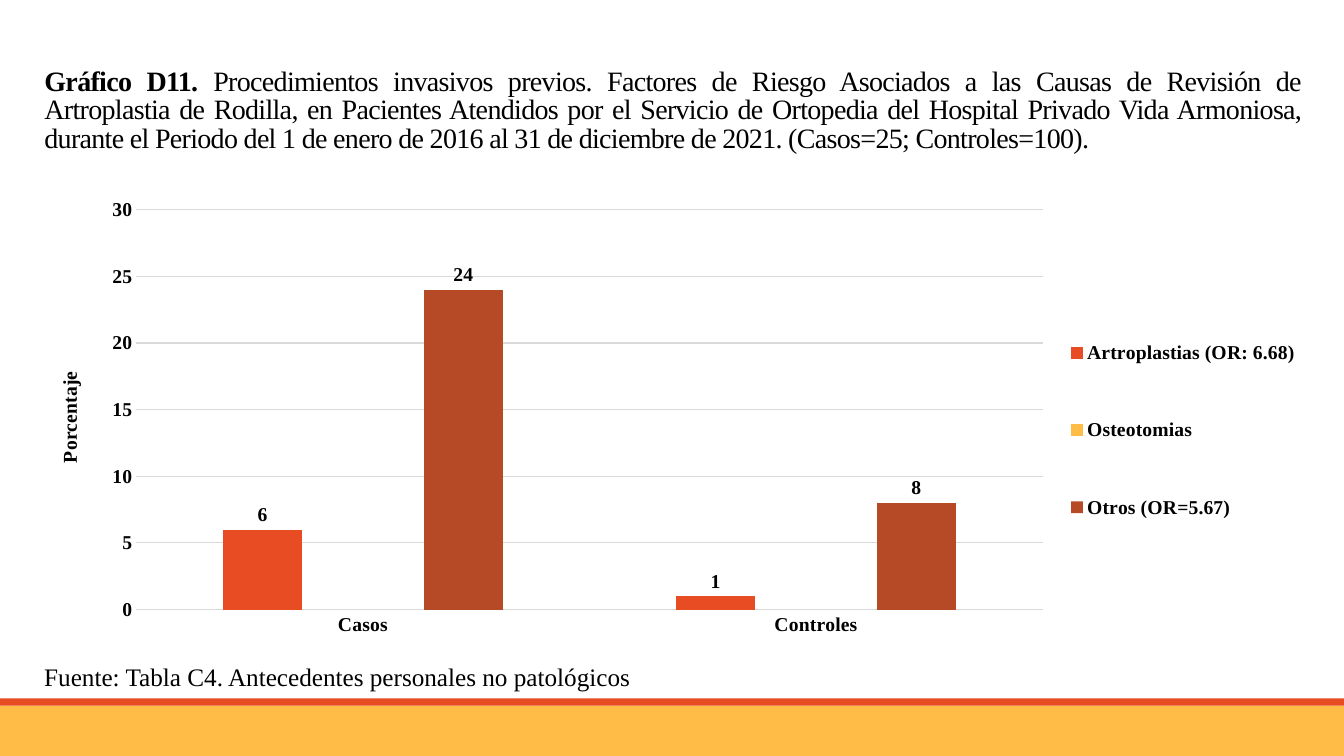
"""Build the slide on previous invasive procedures, with its column chart."""
from dataclasses import dataclass

from lxml import etree
from pptx import Presentation
from pptx.chart.data import CategoryChartData
from pptx.dml.color import RGBColor
from pptx.enum import chart as ch, shapes, text
from pptx.oxml import ns
from pptx.util import Inches, Pt


@dataclass(frozen=True)
class Theme:
    """Colours, font and type sizes."""
    red: str = "E84C22"
    gold: str = "FFBD47"
    rust: str = "B64926"
    ink: str = "000000"
    grid: str = "D9D9D9"
    face: str = "Times New Roman"
    head: int = 20
    note: int = 18
    label: int = 14


THEME = Theme()
LEFT, WIDTH = 0.34, 12.66
LEAD = "Gráfico D11. "
TITLE = (
    "Procedimientos invasivos previos. Factores de Riesgo Asociados a las "
    "Causas de Revisión de Artroplastia de Rodilla, en Pacientes Atendidos "
    "por el Servicio de Ortopedia del Hospital Privado Vida Armoniosa, durante "
    "el Periodo del 1 de enero de 2016 al 31 de diciembre de 2021. "
    "(Casos=25; Controles=100)."
)
SOURCE = "Fuente: Tabla C4. Antecedentes personales no patológicos"
GROUPS = ["Casos", "Controles"]
SERIES = [
    ("Artroplastias (OR: 6.68)", (6, 1), THEME.red),
    ("Osteotomias", (None, None), THEME.gold),
    ("Otros (OR=5.67)", (24, 8), THEME.rust),
]


def box(*sides):
    """Turn left, top, width and height into lengths."""
    return [Inches(side) for side in sides]


def paint(fill, color):
    """Give a fill one solid colour."""
    fill.solid()
    fill.fore_color.rgb = RGBColor.from_string(color)


def style(font, size, bold=False):
    """Set the shared face and ink on a font."""
    font.name, font.size, font.bold = THEME.face, Pt(size), bold
    font.color.rgb = RGBColor.from_string(THEME.ink)


def add_band(slide, top, height, color):
    """Add a full-width band."""
    band = slide.shapes.add_shape(
        shapes.MSO_SHAPE.RECTANGLE, *box(0, top, 13.33, height))
    band.shadow.inherit = False
    paint(band.fill, color)
    band.line.fill.background()


def add_title(slide):
    """Place and fill the title, with a bold lead."""
    title = slide.shapes.title
    title.left, title.top, title.width, title.height = box(
        LEFT, 0.31, WIDTH, 1.59)
    frame = title.text_frame
    frame.word_wrap = True
    frame.auto_size = text.MSO_AUTO_SIZE.NONE
    frame.vertical_anchor = text.MSO_ANCHOR.MIDDLE
    para = frame.paragraphs[0]
    para.alignment = text.PP_ALIGN.JUSTIFY
    para.line_spacing = 0.85
    style(para.font, THEME.head)
    for words, bold in ((LEAD, True), (TITLE, False)):
        run = para.add_run()
        run.text = words
        style(run.font, THEME.head, bold)
        run.font._element.set("spc", "-50")


def add_note(slide):
    """Add the source line under the chart."""
    frame = slide.shapes.add_textbox(*box(LEFT, 6.51, 6.81, 0.4)).text_frame
    frame.word_wrap = True
    para = frame.paragraphs[0]
    para.text = SOURCE
    style(para.font, THEME.note)


def set_area(parent, index, inner=False, **sides):
    """Fix a chart part at fractions of the chart."""
    for old in parent.findall(ns.qn("c:layout")):
        parent.remove(old)
    layout = etree.Element(ns.qn("c:layout"))
    manual = etree.SubElement(layout, ns.qn("c:manualLayout"))
    rules = {"layoutTarget": "inner"} if inner else {}
    rules |= {"xMode": "edge", "yMode": "edge"}
    for name, value in (rules | sides).items():
        etree.SubElement(manual, ns.qn(f"c:{name}")).set("val", str(value))
    parent.insert(index, layout)


def set_axes(chart):
    """Format both axes, the grid and the axis title."""
    cats, vals = chart.category_axis, chart.value_axis
    for axis in (cats, vals):
        axis.major_tick_mark = axis.minor_tick_mark = ch.XL_TICK_MARK.NONE
        style(axis.tick_labels.font, THEME.label, True)
    vals.minimum_scale, vals.maximum_scale, vals.major_unit = 0, 30, 5
    vals.has_major_gridlines = True
    for line in (cats.format.line, vals.major_gridlines.format.line):
        paint(line.fill, THEME.grid)
        line.width = Pt(0.75)
    vals.format.line.fill.background()
    frame = vals.axis_title.text_frame
    frame.text = "Porcentaje"
    frame._txBody.bodyPr.set("rot", "-5400000")
    style(frame.paragraphs[0].font, THEME.label, True)


def add_chart(slide):
    """Add the clustered columns with labels and legend."""
    data = CategoryChartData()
    data.categories = GROUPS
    for name, values, _ in SERIES:
        data.add_series(name, values)
    chart = slide.shapes.add_chart(
        ch.XL_CHART_TYPE.COLUMN_CLUSTERED,
        *box(LEFT, 1.9, WIDTH, 4.51), data).chart
    style(chart.font, THEME.label, True)
    chart.has_title = False
    set_axes(chart)
    plot = chart.plots[0]
    plot.gap_width, plot.overlap, plot.vary_by_categories = 219, -27, False
    for series, (_, _, color) in zip(plot.series, SERIES):
        paint(series.format.fill, color)
        labels = series.data_labels
        labels.show_value = True
        labels.position = ch.XL_LABEL_POSITION.OUTSIDE_END
        style(labels.font, THEME.label, True)
    chart.has_legend = True
    legend = chart.legend
    legend.position = ch.XL_LEGEND_POSITION.RIGHT
    legend.include_in_layout = False
    style(legend.font, THEME.label, True)
    set_area(legend._element, 1, x=0.8, y=0.21, w=0.2, h=0.63)
    area = chart._chartSpace.find(f".//{ns.qn('c:plotArea')}")
    set_area(area, 0, inner=True, x=0.08, y=0.04, w=0.71, h=0.88)


def main():
    """Build and save the slide."""
    deck = Presentation()
    deck.slide_width, deck.slide_height = box(13.33, 7.5)
    slide = deck.slides.add_slide(deck.slide_layouts[5])
    add_band(slide, 7, 0.5, THEME.gold)
    add_band(slide, 6.93, 0.07, THEME.red)
    add_title(slide)
    add_chart(slide)
    add_note(slide)
    deck.save("out.pptx")


if __name__ == "__main__":
    main()
